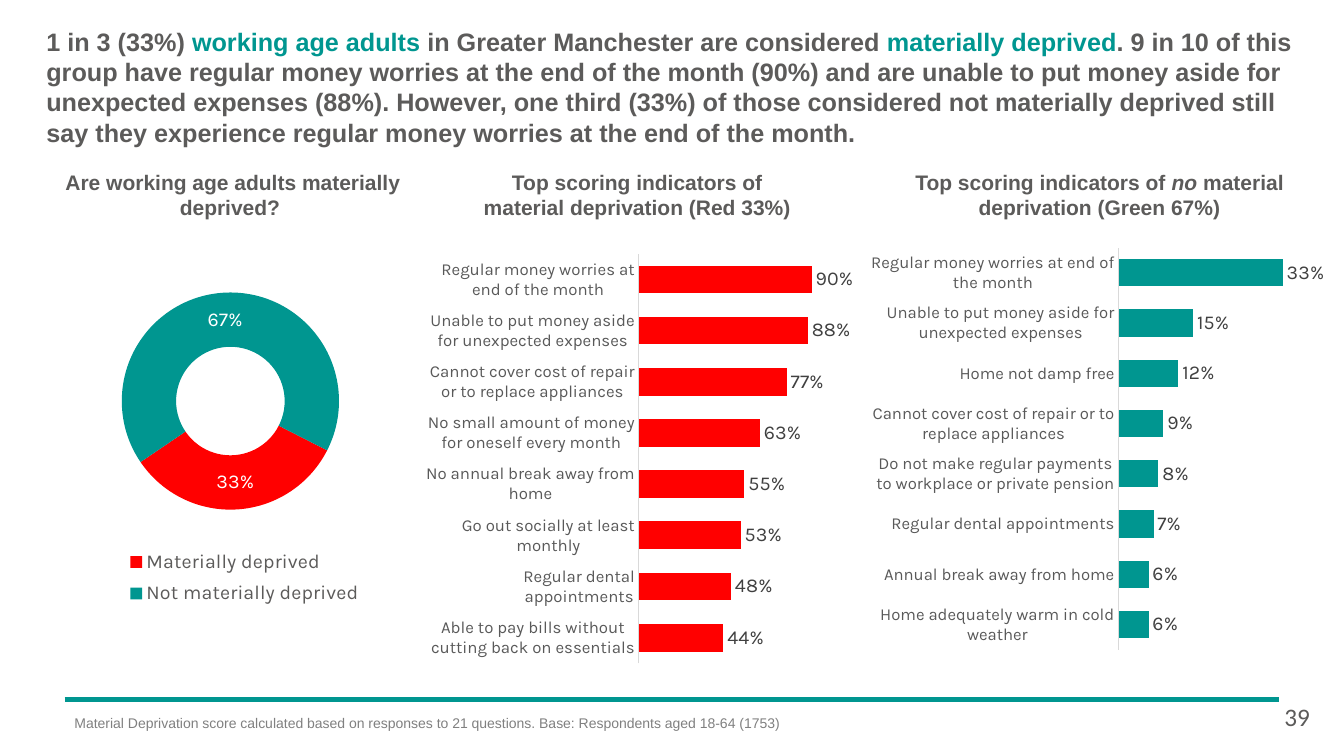
from dataclasses import dataclass

from lxml import etree
from pptx import Presentation
from pptx import util as u
from pptx.chart import data as chart_data
from pptx.dml import color
from pptx.enum import chart as charts
from pptx.enum import shapes, text
from pptx.oxml import ns


@dataclass(frozen=True)
class Theme:
    teal: str = "009690"
    red: str = "FF0000"
    dark: str = "5C5B5A"
    axis_text: str = "595959"
    label: str = "404040"
    footnote: str = "808080"
    axis_line: str = "D9D9D9"
    white: str = "FFFFFF"
    black: str = "000000"
    text_font: str = "Arial"
    chart_font: str = "Karla"
    number_font: str = "Calibri"
    title_size: int = 18
    heading_size: int = 15
    label_size: int = 14
    axis_size: int = 12
    small_size: int = 10


theme = Theme()


def style_font(font, size, hex_color, name):
    font.size = u.Pt(size)
    font.name = name
    font.color.rgb = color.RGBColor.from_string(hex_color)


def set_layout(parent, index, box, inner=False):
    for old_layout in parent.findall(ns.qn("c:layout")):
        parent.remove(old_layout)
    layout = etree.Element(ns.qn("c:layout"))
    manual = etree.SubElement(layout, ns.qn("c:manualLayout"))
    settings = [("layoutTarget", "inner")] if inner else []
    settings += [("xMode", "edge"), ("yMode", "edge"), *zip("xywh", box)]
    for tag, value in settings:
        etree.SubElement(manual, ns.qn(f"c:{tag}")).set("val", str(value))
    parent.insert(index, layout)


presentation = Presentation()
presentation.slide_width = u.Inches(13.33)
presentation.slide_height = u.Inches(7.5)
slide = presentation.slides.add_slide(presentation.slide_layouts[6])

rule = slide.shapes.add_connector(
    shapes.MSO_CONNECTOR.STRAIGHT,
    u.Inches(0.64), u.Inches(6.94), u.Inches(12.69), u.Inches(6.94),
)
rule.line.color.rgb = color.RGBColor.from_string(theme.teal)
rule.line.width = u.Pt(3)
etree.SubElement(rule.element.spPr, ns.qn("a:effectLst"))

title = [
    ("1 in 3 (33%) ", theme.dark),
    ("working age adults ", theme.teal),
    ("in Greater Manchester are considered ", theme.dark),
    ("materially deprived", theme.teal),
    (". 9 in 10 of this group have regular money worries at the end of the month (90%) "
     "and are unable to put money aside for unexpected expenses (88%). However, one third "
     "(33%) of those considered not materially deprived still say they experience regular "
     "money worries at the end of the month.", theme.dark),
]
green_heading = [
    ("Top scoring indicators of ", theme.dark),
    ("no ", theme.dark),
    ("material deprivation (Green 67%)", theme.dark),
]
footnote = ("Material Deprivation score calculated based on responses to 21 questions. "
            "Base: Respondents aged 18-64 (1753)")
left, center = text.PP_ALIGN.LEFT, text.PP_ALIGN.CENTER
text_blocks = [
    ((0.46, 0.26, 12.41, 1.21), title, theme.title_size, theme.text_font, True, left),
    ((0.29, 1.63, 4.04, 0.61), [("Are working age adults materially deprived? ", theme.dark)],
     theme.heading_size, theme.text_font, True, center),
    ((4.66, 1.63, 3.32, 0.61),
     [("Top scoring indicators of material deprivation (Red 33%)", theme.dark)],
     theme.heading_size, theme.text_font, True, center),
    ((8.94, 1.63, 3.93, 0.61), green_heading, theme.heading_size, theme.text_font, True, center),
    ((0.64, 7.04, 12.23, 0.56), [(footnote, theme.footnote)],
     theme.small_size, theme.text_font, False, left),
    ((12.64, 6.91, 0.53, 0.4), [("39", theme.dark)],
     theme.title_size, theme.number_font, False, left),
]
for box, runs, size, font_name, bold, alignment in text_blocks:
    frame = slide.shapes.add_textbox(*map(u.Inches, box)).text_frame
    frame.word_wrap = True
    if runs is title:
        frame.margin_left = frame.margin_right = frame.margin_top = frame.margin_bottom = 0
    paragraph = frame.paragraphs[0]
    paragraph.alignment = alignment
    for wording, hex_color in runs:
        run = paragraph.add_run()
        run.text = wording
        style_font(run.font, size, hex_color, font_name)
        run.font.bold = bold
        run.font.italic = runs is green_heading and wording.startswith("no")

doughnut, bar = charts.XL_CHART_TYPE.DOUGHNUT, charts.XL_CHART_TYPE.BAR_CLUSTERED
chart_blocks = [
    (doughnut, (0.47, 2.51, 3.69, 3.93), (0.2, 0.068, 0.584, 0.612), theme.white, None, None, [
        ("Materially deprived", 0.33),
        ("Not materially deprived", 0.67),
    ]),
    (bar, (4.16, 2.37, 4.48, 4.36), (0.486, 0.034, 0.425, 0.932), theme.label, theme.red, 1, [
        ("Regular money worries at end of the month", 0.9),
        ("Unable to put money aside for unexpected expenses", 0.88),
        ("Cannot cover cost of repair or to replace appliances", 0.77),
        ("No small amount of money for oneself every month", 0.63),
        ("No annual break away from home", 0.55),
        ("Go out socially at least monthly", 0.53),
        ("Regular dental appointments", 0.48),
        ("Able to pay bills without cutting back on essentials", 0.44),
    ]),
    (bar, (8.64, 2.44, 4.83, 4.28), (0.505, 0.004, 0.36, 0.932), theme.label, theme.teal, 0.35, [
        ("Regular money worries at end of the month", 0.33),
        ("Unable to put money aside for unexpected expenses", 0.15),
        ("Home not damp free", 0.12),
        ("Cannot cover cost of repair or to replace appliances", 0.09),
        ("Do not make regular payments to workplace or private pension", 0.08),
        ("Regular dental appointments", 0.07),
        ("Annual break away from home", 0.06),
        ("Home adequately warm in cold weather", 0.06),
    ]),
]
for kind, box, plot_box, label_color, bar_color, maximum, rows in chart_blocks:
    table = chart_data.CategoryChartData(number_format="0%")
    table.categories = [name for name, share in rows]
    table.add_series("Series 1", [share for name, share in rows])
    chart = slide.shapes.add_chart(kind, *map(u.Inches, box), table).chart
    chart.has_title = False
    chart.has_legend = kind == doughnut
    style_font(chart.font, theme.small_size, theme.black, theme.chart_font)
    set_layout(chart.element.xpath(".//c:plotArea")[0], 0, plot_box, inner=True)

    plot = chart.plots[0]
    series = plot.series[0]
    plot.has_data_labels = True
    labels = plot.data_labels
    labels.show_value = True
    labels.show_percentage = False
    labels.number_format = "0%"
    labels.number_format_is_linked = False
    style_font(labels.font, theme.label_size, label_color, theme.chart_font)

    if kind == doughnut:
        plot.vary_by_categories = True
        chart.element.xpath(".//c:firstSliceAng")[0].set("val", "117")
        for index, hex_color in enumerate((theme.red, theme.teal)):
            fill = series.points[index].format.fill
            fill.solid()
            fill.fore_color.rgb = color.RGBColor.from_string(hex_color)
        legend = chart.legend
        legend.position = charts.XL_LEGEND_POSITION.BOTTOM
        legend.include_in_layout = False
        style_font(legend.font, theme.label_size, theme.dark, theme.chart_font)
        set_layout(chart.element.xpath(".//c:legend")[0], 1, (0.18, 0.73, 0.7, 0.18))
        continue

    plot.vary_by_categories = False
    plot.gap_width = 85
    labels.position = charts.XL_LABEL_POSITION.OUTSIDE_END
    series.format.fill.solid()
    series.format.fill.fore_color.rgb = color.RGBColor.from_string(bar_color)
    category_axis, value_axis = chart.category_axis, chart.value_axis
    category_axis.reverse_order = True
    category_axis.major_tick_mark = charts.XL_TICK_MARK.NONE
    category_axis.format.line.color.rgb = color.RGBColor.from_string(theme.axis_line)
    category_axis.format.line.width = u.Pt(0.75)
    style_font(category_axis.tick_labels.font, theme.axis_size, theme.axis_text, theme.chart_font)
    value_axis.minimum_scale = 0
    value_axis.maximum_scale = maximum
    value_axis.has_major_gridlines = False
    value_axis.visible = False

presentation.save("out.pptx")
